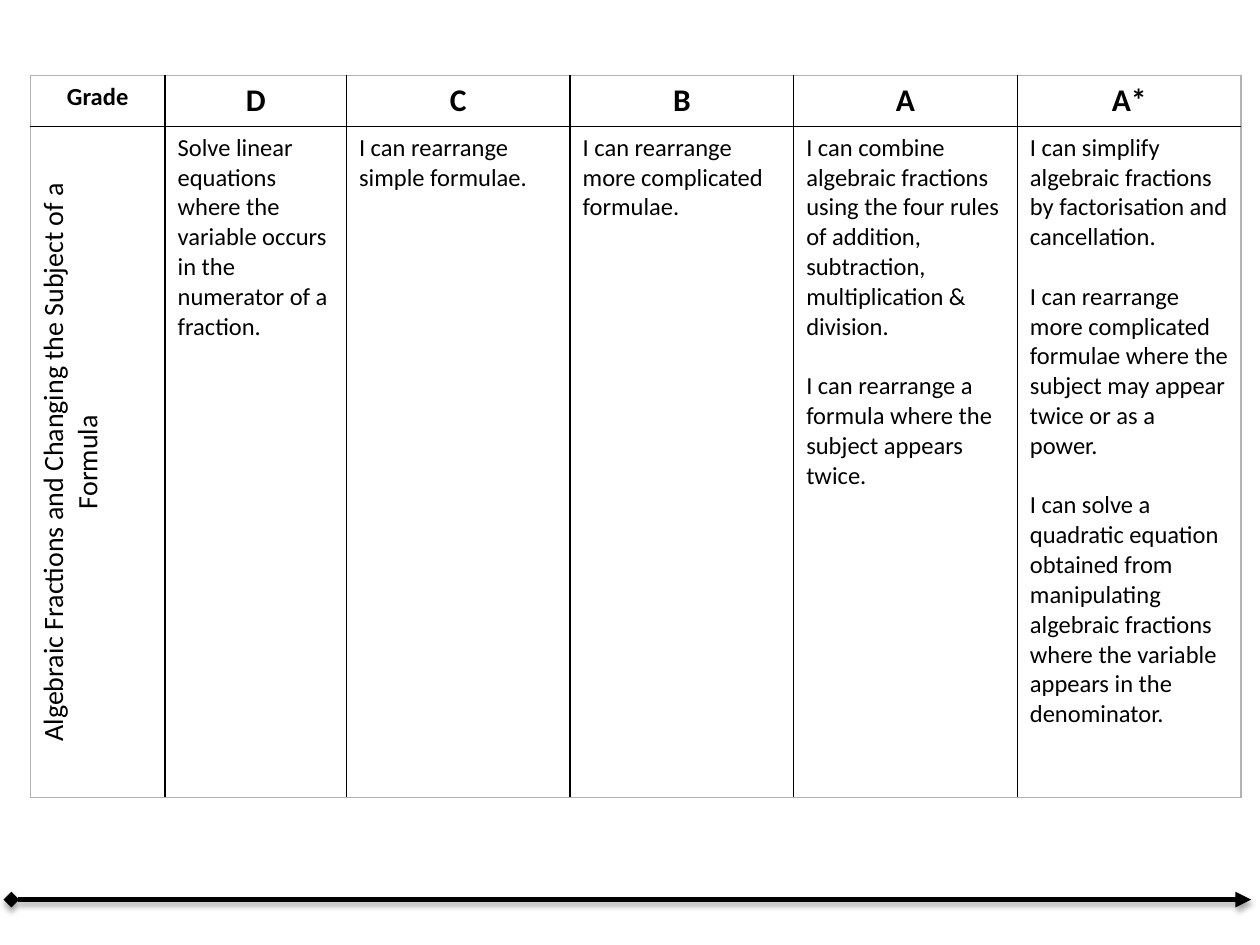
from dataclasses import dataclass, field

from lxml import etree
from pptx import Presentation
from pptx.dml.color import RGBColor
from pptx.enum.shapes import MSO_CONNECTOR as Connector
from pptx.enum.text import PP_ALIGN as Align
from pptx.oxml import parse_xml
from pptx.oxml.ns import nsdecls, qn
from pptx.util import Inches, Pt

COLORS = {"ink": "000000", "paper": "FFFFFF", "frame": "B2B2B2"}
WIDTH, HEIGHT = Inches(10), Inches(7.5)

GRADES = [
    ("D", ["Solve linear equations where the variable occurs in the numerator of a fraction."]),
    ("C", ["I can rearrange simple formulae."]),
    ("B", ["I can rearrange more complicated formulae."]),
    ("A", [
        "I can combine algebraic fractions using the four rules of addition, "
        "subtraction, multiplication & division.",
        "I can rearrange a formula where the subject appears twice.",
    ]),
    ("A*", [
        "I can simplify algebraic fractions by factorisation and cancellation.",
        "I can rearrange more complicated formulae where the subject may appear "
        "twice or as a power.",
        "I can solve a quadratic equation obtained from manipulating algebraic "
        "fractions where the variable appears in the denominator.",
    ]),
]
TOPIC = "Algebraic Fractions and Changing the Subject of a Formula"


@dataclass
class GradeSlide:
    slide: object
    font: str = "Calibri"
    colors: dict = field(default_factory=lambda: COLORS)

    def color(self, name):
        return RGBColor.from_string(self.colors[name])

    def grid(self, left, top, columns, rows):
        frame = self.slide.shapes.add_table(
            len(rows), len(columns), int(left * WIDTH), int(top * HEIGHT),
            int(sum(columns) * WIDTH), int(sum(rows) * HEIGHT))
        table = frame.table
        table.first_row = table.horz_banding = False
        for column, share in zip(table.columns, columns):
            column.width = int(share * WIDTH)
        for row, share in zip(table.rows, rows):
            row.height = int(share * HEIGHT)
        for r in range(len(rows)):
            for c in range(len(columns)):
                outer = {"L": c == 0, "R": c == len(columns) - 1,
                         "T": r == 0, "B": r == len(rows) - 1}
                self.borders(table.cell(r, c), outer)
        return table

    def borders(self, cell, outer):
        cell.fill.solid()
        cell.fill.fore_color.rgb = self.color("paper")
        properties = cell._tc.get_or_add_tcPr()
        for position, (side, on_frame) in enumerate(outer.items()):
            color, width = ("frame", Pt(0.75)) if on_frame else ("ink", Pt(1))
            properties.insert(position, parse_xml(
                f'<a:ln{side} {nsdecls("a")} w="{width}"><a:solidFill>'
                f'<a:srgbClr val="{self.colors[color]}"/></a:solidFill></a:ln{side}>'))

    def entry(self, cell, statements, size, bold=False, align=Align.LEFT, upward=False):
        if upward:
            cell._tc.get_or_add_tcPr().set("vert", "vert270")
        text = cell.text_frame
        text.text = "\n".join(statements)
        for number, paragraph in enumerate(text.paragraphs):
            paragraph.alignment = align
            paragraph.space_before = Pt(17 if number else 0)
            font = paragraph.font
            font.name, font.size, font.bold = self.font, Pt(size), bold
            font.color.rgb = self.color("ink")

    def arrow(self, start, end, level, weight):
        y = int(level * HEIGHT)
        line = self.slide.shapes.add_connector(
            Connector.STRAIGHT, int(start * WIDTH), y, int(end * WIDTH), y)
        line.line.color.rgb = self.color("ink")
        line.line.width = Pt(weight)
        outline = line.line._get_or_add_ln()
        for tag, shape in (("a:headEnd", "diamond"), ("a:tailEnd", "triangle")):
            etree.SubElement(outline, qn(tag), type=shape)
        line._element.spPr.append(parse_xml(
            f'<a:effectLst {nsdecls("a")}><a:outerShdw blurRad="{Pt(3.1)}" dist="{Pt(1.8)}" '
            f'dir="5400000" rotWithShape="0"><a:srgbClr val="{self.colors["ink"]}">'
            '<a:alpha val="35000"/></a:srgbClr></a:outerShdw></a:effectLst>'))


def main():
    deck = Presentation()
    deck.slide_width, deck.slide_height = WIDTH, HEIGHT
    page = GradeSlide(deck.slides.add_slide(deck.slide_layouts[6]))

    ladder = page.grid(0.024, 0.08, [0.107, 0.144] + [0.1775] * 4, [0.054, 0.71])
    page.entry(ladder.cell(0, 0), ["Grade"], 14, True, Align.CENTER)
    page.entry(ladder.cell(1, 0), [TOPIC], 16, align=Align.CENTER, upward=True)
    for column, (grade, statements) in enumerate(GRADES, start=1):
        page.entry(ladder.cell(0, column), [grade], 18, True, Align.CENTER)
        page.entry(ladder.cell(1, column), statements, 14)

    page.arrow(0.009, 0.993, 0.952, 3)
    deck.save("out.pptx")


if __name__ == "__main__":
    main()
